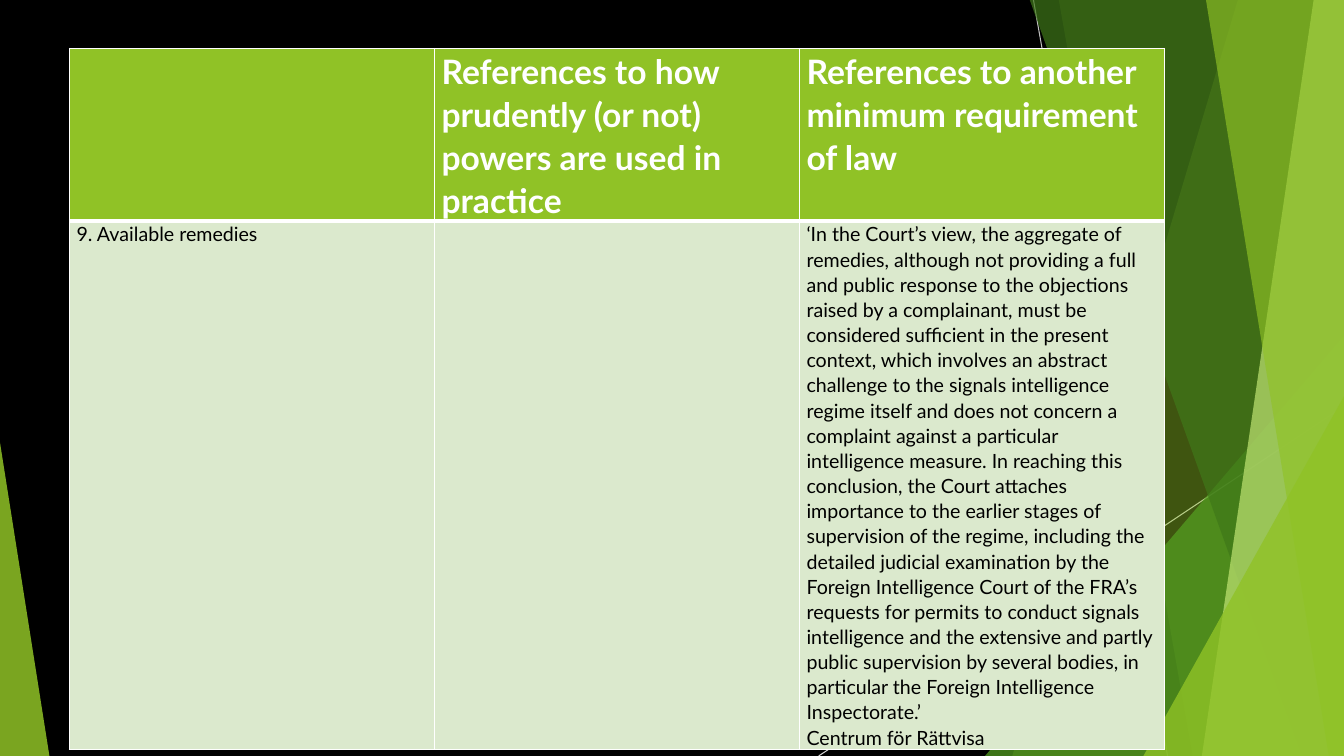
import pptx
import pptx.dml.color
import pptx.enum.shapes
import pptx.oxml
import pptx.oxml.ns
import pptx.util
from lxml import etree

Inches = pptx.util.Inches
Pt = pptx.util.Pt
RGBColor = pptx.dml.color.RGBColor
qn = pptx.oxml.ns.qn

BLACK = RGBColor(0x00, 0x00, 0x00)
WHITE = RGBColor(0xFF, 0xFF, 0xFF)
LIME = RGBColor(0x90, 0xC2, 0x26)
GREEN = RGBColor(0x54, 0xA0, 0x21)
FOREST = RGBColor(0x3F, 0x78, 0x19)
PALE_LIME = RGBColor(0xC0, 0xE4, 0x74)
PALE_GREEN = RGBColor(0xDB, 0xE9, 0xCD)
GREY = RGBColor(0xBF, 0xBF, 0xBF)
LIGHT_GREY = RGBColor(0xD9, 0xD9, 0xD9)

WIDTH, HEIGHT = 13.33, 7.5
FONT = "Lato"

HEADINGS = [
    "",
    "References to how prudently (or not) powers are used in practice",
    "References to another minimum requirement of law",
]
REMEDIES = [
    "9. Available remedies",
    "",
    "‘In the Court’s view, the aggregate of remedies, although not providing a full "
    "and public response to the objections raised by a complainant, must be considered "
    "sufficient in the present context, which involves an abstract challenge to the "
    "signals intelligence regime itself and does not concern a complaint against a "
    "particular intelligence measure. In reaching this conclusion, the Court attaches "
    "importance to the earlier stages of supervision of the regime, including the "
    "detailed judicial examination by the Foreign Intelligence Court of the FRA’s "
    "requests for permits to conduct signals intelligence and the extensive and partly "
    "public supervision by several bodies, in particular the Foreign Intelligence "
    "Inspectorate.’\nCentrum för Rättvisa",
]


class SlideBuilder:
    """Draw facets, lines and tables on one slide in a shared style."""

    def __init__(self, presentation):
        self.slide = presentation.slides.add_slide(presentation.slide_layouts[6])
        self.shapes = self.slide.shapes
        background = self.slide.background.fill
        background.solid()
        background.fore_color.rgb = BLACK

    def line(self, start, end, color):
        connector = self.shapes.add_connector(
            pptx.enum.shapes.MSO_CONNECTOR.STRAIGHT,
            *(Inches(value) for value in (*start, *end)),
        )
        connector.line.color.rgb = color
        connector.line.width = Pt(0.75)
        etree.SubElement(connector._element.spPr, qn("a:effectLst"))

    def paint(self, shape, color, opacity):
        shape.shadow.inherit = False
        shape.line.fill.background()
        shape.fill.solid()
        shape.fill.fore_color.rgb = color
        color_element = shape._element.spPr.find(qn("a:solidFill"))[0]
        etree.SubElement(color_element, qn("a:alpha"), val=str(opacity * 1000))

    def facet(self, top_x, bottom_x, color, opacity):
        corners = [(WIDTH, -0.01), (WIDTH, HEIGHT), (bottom_x, HEIGHT)]
        builder = self.shapes.build_freeform(Inches(top_x), Inches(-0.01))
        builder.add_line_segments([(Inches(x), Inches(y)) for x, y in corners], close=True)
        self.paint(builder.convert_to_shape(), color, opacity)

    def triangle(self, left, top, width, apex, color, opacity):
        shape = self.shapes.add_shape(
            pptx.enum.shapes.MSO_SHAPE.ISOSCELES_TRIANGLE,
            Inches(left), Inches(top), Inches(width), Inches(HEIGHT - top),
        )
        shape.adjustments[0] = apex
        self.paint(shape, color, opacity)

    def borders(self, cell, top, bottom):
        properties = cell._tc.get_or_add_tcPr()
        for side, points in (("L", 1), ("R", 1), ("T", top), ("B", bottom)):
            border = etree.SubElement(properties, qn(f"a:ln{side}"), w=str(Pt(points)))
            fill = etree.SubElement(border, qn("a:solidFill"))
            etree.SubElement(fill, qn("a:srgbClr"), val=str(WHITE))

    def cell(self, cell, text, size, bold, color, fill):
        cell.margin_left = cell.margin_right = Inches(0.07)
        cell.margin_top = cell.margin_bottom = 0
        cell.fill.solid()
        cell.fill.fore_color.rgb = fill
        cell.text = text
        for paragraph in cell.text_frame.paragraphs:
            paragraph.line_spacing = 1.07
            paragraph.font.name = FONT
            paragraph.font.size = Pt(size)
            paragraph.font.bold = bold
            paragraph.font.color.rgb = color

    def table(self, left, top, column_width, row_heights, headings, body):
        frame = self.shapes.add_table(
            2, len(headings), Inches(left), Inches(top),
            Inches(column_width * len(headings)), Inches(sum(row_heights)),
        )
        table = frame.table
        for column in table.columns:
            column.width = Inches(column_width)
        for row, height in zip(table.rows, row_heights):
            row.height = Inches(height)
        for index, (heading, text) in enumerate(zip(headings, body)):
            header_cell, body_cell = table.cell(0, index), table.cell(1, index)
            self.borders(header_cell, 1, 3)
            self.cell(header_cell, heading, 24, True, WHITE, LIME)
            self.borders(body_cell, 3, 1)
            self.cell(body_cell, text, 14, False, BLACK, PALE_GREEN)


def main():
    presentation = pptx.Presentation()
    presentation.slide_width = Inches(WIDTH)
    presentation.slide_height = Inches(HEIGHT)
    builder = SlideBuilder(presentation)

    builder.line((10.25, 0), (11.58, HEIGHT), GREY)
    builder.line((WIDTH, 4.03), (8.12, HEIGHT), LIGHT_GREY)
    builder.facet(12.28, 10.04, LIME, 30)
    builder.facet(10.5, 11.83, LIME, 20)
    builder.triangle(9.77, 3.33, 3.56, 1, GREEN, 72)
    builder.facet(10.21, 12.91, FOREST, 70)
    builder.facet(13.03, 11.92, PALE_LIME, 70)
    builder.facet(11.96, 13.18, LIME, 65)
    builder.triangle(11.34, 3.93, 1.99, 1, LIME, 80)
    builder.triangle(0, 4.39, 0.49, 0, LIME, 85)
    builder.table(0.69, 0.48, 3.62, (1.7, 5.21), HEADINGS, REMEDIES)

    presentation.save("out.pptx")


if __name__ == "__main__":
    main()
